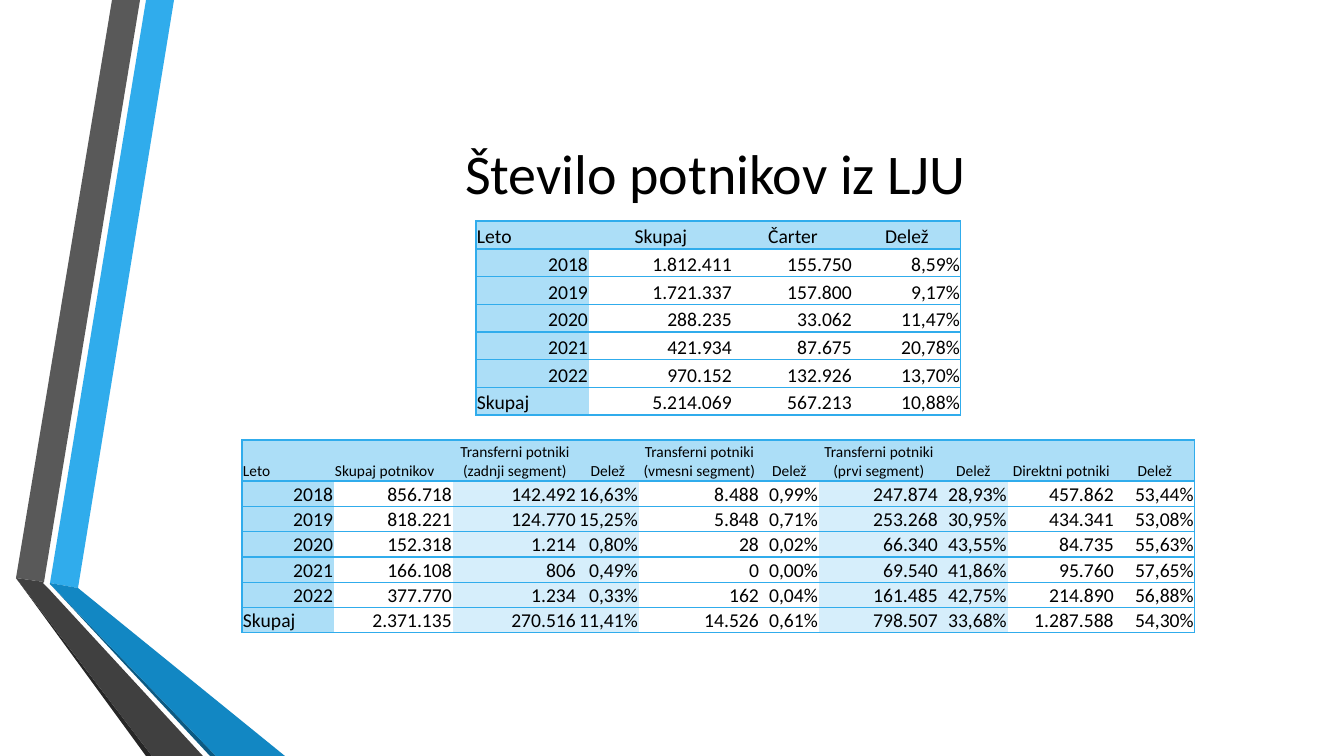
import lxml.etree
import pptx
import pptx.dml.color
import pptx.enum.text
import pptx.oxml.ns
import pptx.util

COLORS = {
    "sky": "30ACEC", "blue": "1287C3", "navy": "0C5A82",
    "gray": "595959", "charcoal": "404040", "soot": "262626",
    "heading": "ACDEF7", "band": "D6EEFB", "white": "FFFFFF", "black": "000000",
}
RIBBONS = [
    ("sky", [(50, 583), (78, 588), (174, 0), (146, 0)]),
    ("gray", [(140, 0), (112, 0), (16, 578), (44, 582)]),
    ("soot", [(16, 578), (146, 756), (152, 756)]),
    ("navy", [(50, 584), (210, 756), (216, 756)]),
    ("blue", [(50, 584), (216, 756), (285, 756), (78, 588), (50, 583)]),
    ("charcoal", [(203, 756), (48, 588), (43, 583), (44, 582), (16, 578), (152, 756)]),
]
CHARTER_PASSENGERS = [
    ["Leto", "Skupaj", "Čarter", "Delež"],
    ["2018", "1.812.411", "155.750", "8,59%"],
    ["2019", "1.721.337", "157.800", "9,17%"],
    ["2020", "288.235", "33.062", "11,47%"],
    ["2021", "421.934", "87.675", "20,78%"],
    ["2022", "970.152", "132.926", "13,70%"],
    ["Skupaj", "5.214.069", "567.213", "10,88%"],
]
TRANSFER_PASSENGERS = [
    ["Leto", "Skupaj potnikov", "Transferni potniki (zadnji segment)", "Delež",
     "Transferni potniki (vmesni segment)", "Delež",
     "Transferni potniki (prvi segment)", "Delež", "Direktni potniki", "Delež"],
    ["2018", "856.718", "142.492", "16,63%", "8.488", "0,99%", "247.874", "28,93%", "457.862", "53,44%"],
    ["2019", "818.221", "124.770", "15,25%", "5.848", "0,71%", "253.268", "30,95%", "434.341", "53,08%"],
    ["2020", "152.318", "1.214", "0,80%", "28", "0,02%", "66.340", "43,55%", "84.735", "55,63%"],
    ["2021", "166.108", "806", "0,49%", "0", "0,00%", "69.540", "41,86%", "95.760", "57,65%"],
    ["2022", "377.770", "1.234", "0,33%", "162", "0,04%", "161.485", "42,75%", "214.890", "56,88%"],
    ["Skupaj", "2.371.135", "270.516", "11,41%", "14.526", "0,61%", "798.507", "33,68%", "1.287.588", "54,30%"],
]


class SlideBuilder:
    """Draws styled elements on one slide, with lengths in px."""

    SCALE = 914400 / 100.8
    FONT = "Calibri"
    ALIGN = pptx.enum.text.PP_ALIGN
    ANCHOR = pptx.enum.text.MSO_ANCHOR

    def __init__(self, slide):
        self.slide = slide

    @classmethod
    def emu(cls, px):
        return pptx.util.Emu(round(px * cls.SCALE))

    def paint(self, fill, color):
        fill.solid()
        fill.fore_color.rgb = pptx.dml.color.RGBColor.from_string(COLORS[color])

    def label(self, paragraph, text, size, align):
        paragraph.text = text
        paragraph.alignment = align
        paragraph.font.name = self.FONT
        paragraph.font.size = pptx.util.Pt(size)
        self.paint(paragraph.font.fill, "black")

    def ribbon(self, color, points):
        outline = self.slide.shapes.build_freeform(*points[0], scale=self.SCALE)
        outline.add_line_segments(points[1:], close=True)
        ribbon = outline.convert_to_shape()
        ribbon.shadow.inherit = False
        ribbon.line.fill.background()
        self.paint(ribbon.fill, color)

    def title(self, text, *box):
        frame = self.slide.shapes.add_textbox(*map(self.emu, box)).text_frame
        frame.word_wrap = True
        frame.vertical_anchor = self.ANCHOR.MIDDLE
        self.label(frame.paragraphs[0], text, 40, self.ALIGN.CENTER)

    def borders(self, cell, visible_sides):
        properties = cell._tc.get_or_add_tcPr()
        for side in "LRTB":
            line = lxml.etree.SubElement(properties, pptx.oxml.ns.qn(f"a:ln{side}"), w="12700")
            if side in visible_sides:
                solid = lxml.etree.SubElement(line, pptx.oxml.ns.qn("a:solidFill"))
                lxml.etree.SubElement(solid, pptx.oxml.ns.qn("a:srgbClr"), val=COLORS["sky"])
            else:
                lxml.etree.SubElement(line, pptx.oxml.ns.qn("a:noFill"))

    def cell(self, cell, text, size, align, color, visible_sides):
        self.borders(cell, visible_sides)
        self.paint(cell.fill, color)
        cell.vertical_anchor = self.ANCHOR.BOTTOM
        cell.margin_left = cell.margin_right = cell.margin_top = self.emu(1)
        cell.margin_bottom = 0
        self.label(cell.text_frame.paragraphs[0], text, size, align)

    def table(self, rows, left, top, widths, header_height, body_height,
              header_size, left_headers=1, banded=()):
        box = (left, top, sum(widths), header_height + body_height)
        table = self.slide.shapes.add_table(len(rows), len(widths), *map(self.emu, box)).table
        table.first_row = table.horz_banding = False
        for column, width in zip(table.columns, widths):
            column.width = self.emu(width)
        for r, row in enumerate(rows):
            table.rows[r].height = self.emu(body_height / (len(rows) - 1) if r else header_height)
            for c, text in enumerate(row):
                if r == 0:
                    align = self.ALIGN.LEFT if c < left_headers else self.ALIGN.CENTER
                else:
                    align = self.ALIGN.LEFT if text == "Skupaj" else self.ALIGN.RIGHT
                color = "heading" if r == 0 or c == 0 else "band" if c in banded else "white"
                sides = "TB" + ("L" if c == 0 else "R" if c == len(row) - 1 else "")
                self.cell(table.cell(r, c), text, 14 if r else header_size, align, color, sides)


def main():
    presentation = pptx.Presentation()
    presentation.slide_width = SlideBuilder.emu(1344)
    presentation.slide_height = SlideBuilder.emu(756)
    builder = SlideBuilder(presentation.slides.add_slide(presentation.slide_layouts[6]))
    for color, points in RIBBONS:
        builder.ribbon(color, points)
    builder.title("Število potnikov iz LJU", 163, 76, 1105, 193)
    builder.table(CHARTER_PASSENGERS, 476, 221, [113, 144, 120, 108], 28, 166, header_size=14)
    builder.table(TRANSFER_PASSENGERS, 242, 440, [92, 119, 124, 62, 121, 59, 120, 69, 107, 80],
                  41, 152, header_size=11, left_headers=2, banded=(2, 3, 6, 7))
    presentation.save("out.pptx")


if __name__ == "__main__":
    main()
